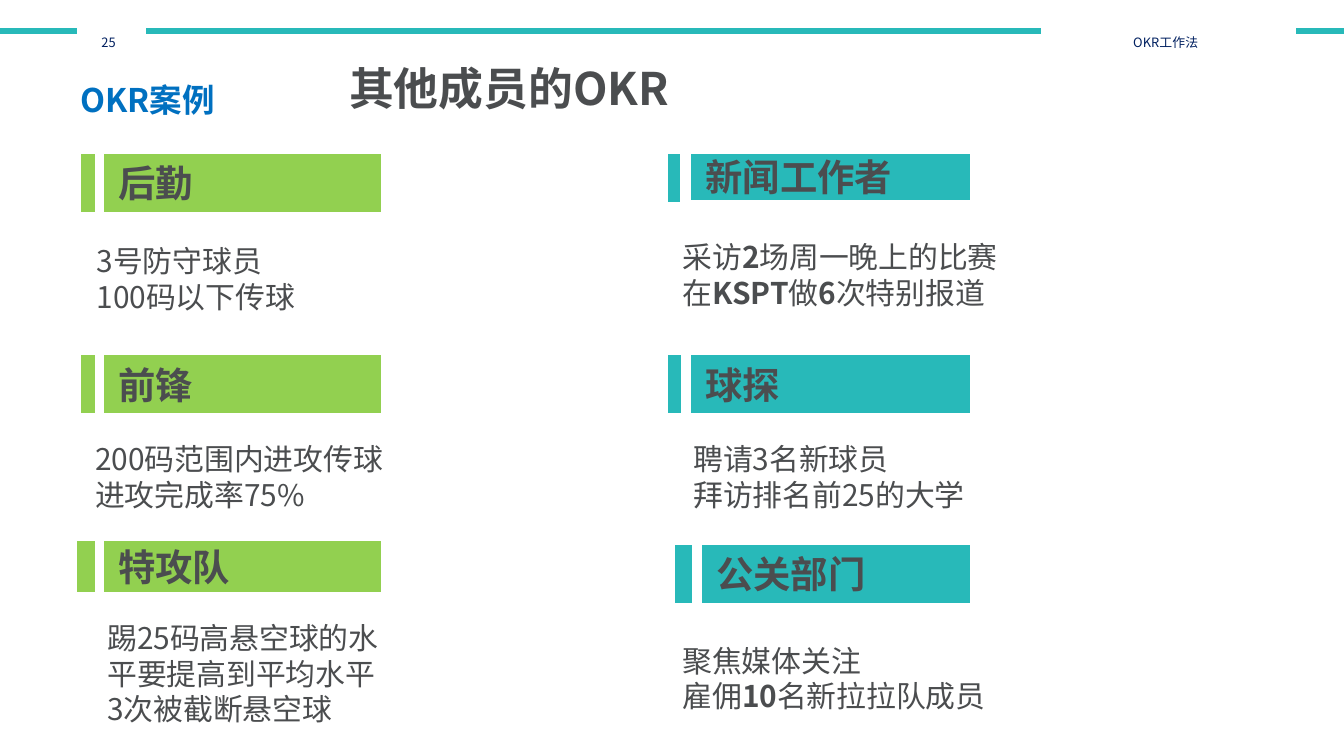
from pptx import Presentation
from pptx.dml.color import RGBColor
from pptx.enum.shapes import MSO_CONNECTOR, MSO_SHAPE
from pptx.enum.text import MSO_ANCHOR, MSO_AUTO_SIZE, PP_ALIGN
from pptx.oxml.ns import qn
from pptx.util import Inches, Pt

RECTANGLE = MSO_SHAPE.RECTANGLE
STRAIGHT = MSO_CONNECTOR.STRAIGHT
TOP, MIDDLE = MSO_ANCHOR.TOP, MSO_ANCHOR.MIDDLE
LEFT, CENTER = PP_ALIGN.LEFT, PP_ALIGN.CENTER
NO_AUTOSIZE = MSO_AUTO_SIZE.NONE

TEAL = RGBColor(0x28, 0xB9, 0xB9)
GREEN = RGBColor(0x92, 0xD0, 0x50)
WHITE = RGBColor(0xFF, 0xFF, 0xFF)
NAVY = RGBColor(0x00, 0x20, 0x60)
BLUE = RGBColor(0x00, 0x70, 0xC0)
GRAY = RGBColor(0x4B, 0x4D, 0x4F)

FONT = "Noto Sans CJK SC"
WIDTH = 10
HEIGHT = WIDTH * 9 / 16
RULE_TOP = 0.23
ROW_TOPS = (1.15, 2.65, 4.03)

# Header labels: text, left, width
HEADER_LABELS = [("25", 0.58, 0.5), ("OKR工作法", 7.75, 1.89)]

# Each column: colour, right edge of the bars, cards from top to bottom.
# Tab is (left, width, height), bar (left, height), body (left, top, width, height).
# In lines, every second piece between asterisks is bold.
COLUMNS = [
    (GREEN, 2.83, [
        dict(name="后勤", tab=(0.61, 0.09, 0.42), bar=(0.78, 0.42),
             body=(0.62, 1.76, 2.35, 0.64),
             lines=["3号防守球员", "100码以下传球"]),
        dict(name="前锋", tab=(0.61, 0.09, 0.42), bar=(0.78, 0.42),
             body=(0.61, 3.23, 2.35, 0.64),
             lines=["200码范围内进攻传球进攻完成率75%"]),
        dict(name="特攻队", tab=(0.58, 0.12, 0.37), bar=(0.78, 0.37),
             body=(0.7, 4.56, 2.35, 0.91),
             lines=["踢25码高悬空球的水平要提高到平均水平", "3次被截断悬空球"]),
    ]),
    (TEAL, 7.21, [
        dict(name="新闻工作者", tab=(4.98, 0.07, 0.35), bar=(5.15, 0.33),
             body=(4.98, 1.73, 3.02, 0.64),
             lines=["采访*2*场周一晚上的比赛", "在*KSPT*做*6*次特别报道"]),
        dict(name="球探", tab=(4.98, 0.08, 0.42), bar=(5.15, 0.42),
             body=(5.06, 3.23, 2.65, 0.64),
             lines=["聘请3名新球员", "拜访排名前25的大学"]),
        dict(name="公关部门", tab=(5.03, 0.11, 0.42), bar=(5.23, 0.42), drop=0.03,
             body=(4.98, 4.73, 2.77, 0.64),
             lines=["聚焦媒体关注", "雇佣*10*名新拉拉队成员"]),
    ]),
]


def write(shape, lines, size, color, bold=False, align=LEFT, anchor=TOP,
          leading=1.2, baseline=None):
    """Fill a shape with lines; pieces between asterisks are bold."""
    frame = shape.text_frame
    frame.word_wrap = True
    frame.auto_size = NO_AUTOSIZE
    frame.vertical_anchor = anchor
    for index, line in enumerate(lines):
        para = frame.paragraphs[0] if index == 0 else frame.add_paragraph()
        para.alignment = align
        para.line_spacing = Pt(round(size * leading, 1))
        for order, piece in enumerate(line.split("*")):
            span = para.add_run()
            span.text = piece
            font = span.font
            font.name, font.size = FONT, Pt(size)
            font.color.rgb = color
            font.bold = bold or order % 2 == 1
            properties = font._element
            properties.find(qn("a:latin")).addnext(
                properties.makeelement(qn("a:ea"), {"typeface": FONT}))
            if baseline is not None:
                properties.set("baseline", str(baseline * 1000))


def add_block(page, left, top, width, height, color, line_width=1):
    """Add a flat rectangle with sharp corners."""
    block = page.shapes.add_shape(
        RECTANGLE, Inches(left), Inches(top), Inches(width), Inches(height))
    block.shadow.inherit = False
    block.fill.solid()
    block.fill.fore_color.rgb = color
    block.line.color.rgb = color
    block.line.width = Pt(line_width)
    outline = block._element.spPr.find(qn("a:ln"))
    outline.append(outline.makeelement(qn("a:miter"), {"lim": "800000"}))
    return block


def add_text(page, left, top, width, height, lines, **style):
    box = page.shapes.add_textbox(
        Inches(left), Inches(top), Inches(width), Inches(height))
    write(box, lines, **style)


def add_header(page):
    rule = page.shapes.add_connector(
        STRAIGHT, 0, Inches(RULE_TOP), Inches(WIDTH), Inches(RULE_TOP))
    rule.line.color.rgb = TEAL
    rule.line.width = Pt(3)
    properties = rule._element.spPr
    properties.append(properties.makeelement(qn("a:effectLst"), {}))
    for text, left, width in HEADER_LABELS:
        label = add_block(page, left, 0.09, width, 0.3, WHITE, line_width=0.75)
        write(label, [text], size=12, color=NAVY, align=CENTER, anchor=MIDDLE,
              leading=1.55, baseline=-25)
        label.text_frame.margin_right = Inches(0.14)


def add_card(page, card, top, color, right):
    tab_left, tab_width, tab_height = card["tab"]
    bar_left, bar_height = card["bar"]
    add_block(page, tab_left, top, tab_width, tab_height, color)
    bar = add_block(page, bar_left, top, right - bar_left, bar_height, color)
    write(bar, [card["name"]], size=20, color=GRAY, bold=True, anchor=MIDDLE)
    add_text(page, *card["body"], card["lines"], size=16, color=GRAY)


def main():
    deck = Presentation()
    deck.slide_width, deck.slide_height = Inches(WIDTH), Inches(HEIGHT)
    page = deck.slides.add_slide(deck.slide_layouts[6])
    add_header(page)
    add_text(page, 0.5, 0.28, 5.9, 0.61, ["OKR案例"], size=30, color=BLUE,
             bold=True, anchor=MIDDLE, leading=1.45, baseline=-25)
    add_text(page, 2.5, 0.4, 5.83, 0.5, ["其他成员的OKR"], size=24, color=GRAY,
             bold=True)
    for color, right, cards in COLUMNS:
        for row_top, card in zip(ROW_TOPS, cards):
            add_card(page, card, row_top + card.get("drop", 0), color, right)
    deck.save("out.pptx")


if __name__ == "__main__":
    main()
